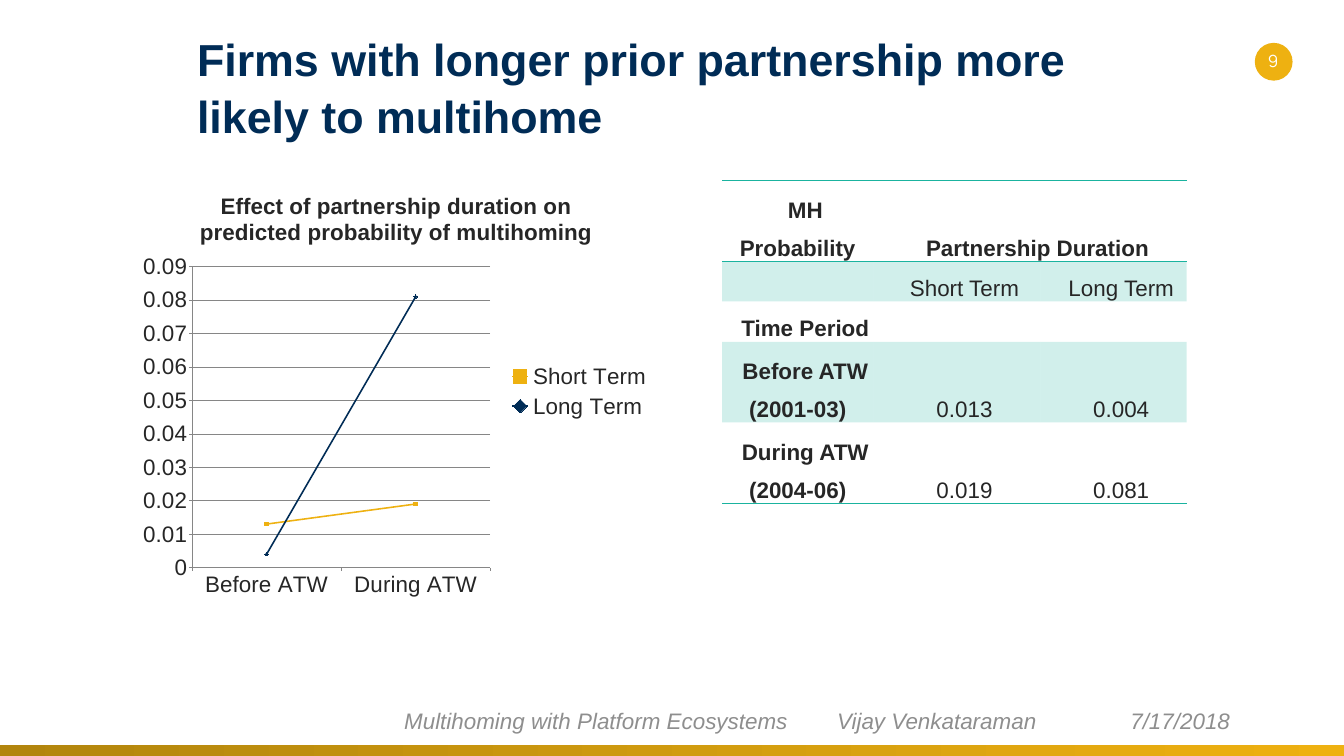
import pptx
import pptx.util
import pptx.chart.data
import pptx.dml.color
import pptx.enum.chart
import pptx.enum.shapes
import pptx.enum.text
import pptx.oxml
import pptx.oxml.ns

Inches, Pt = pptx.util.Inches, pptx.util.Pt
Align, Anchor = pptx.enum.text.PP_ALIGN, pptx.enum.text.MSO_ANCHOR
qn = pptx.oxml.ns.qn
NAVY, GOLD, TEAL, INK, GREY = "002C56", "EEB111", "1AB39F", "262626", "8E8E8E"


def paint(target, color):
    """Give a font, fill or line format a solid colour."""
    if hasattr(target, "solid"):
        target.solid()
        target = target.fore_color
    elif hasattr(target, "color"):
        target = target.color
    target.rgb = pptx.dml.color.RGBColor.from_string(color)


def write(para, text, size, color, bold=False, italic=False, face="Arial"):
    """Add one formatted run to a paragraph."""
    run = para.add_run()
    run.text = text
    font = run.font
    font.name, font.size, font.bold, font.italic = face, Pt(size), bold, italic
    paint(font, color)


deck = pptx.Presentation()
deck.slide_width, deck.slide_height = Inches(26.67), Inches(15)
slide = deck.slides.add_slide(deck.slide_layouts[6])
shapes = slide.shapes

# Page badge and bottom bar
kinds = pptx.enum.shapes.MSO_SHAPE
badge = shapes.add_shape(kinds.OVAL, Inches(24.9), Inches(0.85), Inches(0.75), Inches(0.75))
bar = shapes.add_shape(kinds.RECTANGLE, 0, Inches(14.79), Inches(26.67), Inches(0.38))
for shape in (badge, bar):
    shape.shadow.inherit = False
    shape.line.fill.background()
paint(badge.fill, GOLD)
bar.fill.gradient()
bar.fill.gradient_angle = 0
for stop, color in zip(bar.fill.gradient_stops, ("B2850D", GOLD)):
    paint(stop, color)

# Text boxes: place, side and top insets, anchor, alignment, text and style
boxes = [
    ((24.68, 0.95, 1.17, 0.8), 0.1, 0.05, Anchor.TOP, Align.CENTER,
     "9", dict(size=24, color="FFFFFF", face="Manrope")),
    ((3.64, 0.45, 19.92, 2.4), 0.27, 0.13, Anchor.TOP, Align.LEFT,
     "Firms with longer prior partnership more likely to multihome",
     dict(size=64, color=NAVY, bold=True)),
    ((7.75, 13.86, 13.85, 0.88), 0.27, 0.13, Anchor.MIDDLE, Align.LEFT,
     "Multihoming with Platform Ecosystems\tVijay Venkataraman",
     dict(size=32, color=GREY, italic=True)),
    ((22.16, 13.9, 3.18, 0.8), 0.27, 0.13, Anchor.MIDDLE, Align.LEFT,
     "7/17/2018", dict(size=32, color=GREY, italic=True)),
]
for place, side, top, anchor, align, text, style in boxes:
    frame = shapes.add_textbox(*map(Inches, place)).text_frame
    frame.word_wrap = True
    frame.margin_left = frame.margin_right = Inches(side)
    frame.margin_top = frame.margin_bottom = Inches(top)
    frame.vertical_anchor = anchor
    para = frame.paragraphs[0]
    para.alignment = align
    if style["size"] == 64:
        para.line_spacing = 1.05
    if "\t" in text:
        tabs = pptx.oxml.parse_xml(
            f'<a:tabLst {pptx.oxml.ns.nsdecls("a")}>'
            f'<a:tab pos="{Inches(8.59)}" algn="l"/></a:tabLst>')
        para._p.get_or_add_pPr().append(tabs)
    write(para, text, **style)

# Probability table
rows = [
    ["MH Probability", "Partnership Duration", ""],
    ["", "Short Term", "Long Term"],
    ["Time Period", "", ""],
    ["Before ATW (2001-03)", "0.013", "0.004"],
    ["During ATW (2004-06)", "0.019", "0.081"],
]
edges = {0: ("lnT", "lnB"), 4: ("lnB",)}
grid = shapes.add_table(5, 3, Inches(14.33), Inches(3.58), Inches(9.23), Inches(6.15))
table = grid.table
table.first_row = table.horz_banding = False
table._tbl.tblPr.find(qn("a:tableStyleId")).text = "{2D5ABB26-0587-4C30-8999-92F81FD0307C}"
for col, width in zip(table.columns, (3, 3.32, 2.9)):
    col.width = Inches(width)
for row, height in zip(table.rows, (1.57, 0.72, 0.72, 1.57, 1.57)):
    row.height = Inches(height)
table.cell(0, 1).merge(table.cell(0, 2))
for r, row in enumerate(rows):
    for c, text in enumerate(row):
        cell = table.cell(r, c)
        cell.margin_left = cell.margin_right = Inches(0.07)
        cell.margin_top = cell.margin_bottom = 0
        cell.vertical_anchor = Anchor.BOTTOM
        props = cell._tc.get_or_add_tcPr()
        if r % 2:
            paint(cell.fill, TEAL)
            tint = props.find(".//" + qn("a:srgbClr"))
            tint.makeelement(qn("a:alpha"), {"val": "20000"})
            tint.append(tint.makeelement(qn("a:alpha"), {"val": "20000"}))
        else:
            cell.fill.background()
        for i, edge in enumerate(edges.get(r, ())):
            props.insert(i, pptx.oxml.parse_xml(
                f'<a:{edge} {pptx.oxml.ns.nsdecls("a")} w="{Pt(1)}"><a:solidFill>'
                f'<a:srgbClr val="{TEAL}"/></a:solidFill></a:{edge}>'))
        if text:
            para = cell.text_frame.paragraphs[0]
            para.alignment, para.line_spacing = Align.CENTER, 1.5
            para._p.get_or_add_pPr().set("indent", str(Inches(0.3)))
            write(para, text, 32, INK, bold=r == 0 or c == 0)

# Line chart
enums = pptx.enum.chart
data = pptx.chart.data.CategoryChartData()
data.categories = ["Before ATW", "During ATW"]
data.add_series("Short Term", (0.013, 0.019))
data.add_series("Long Term", (0.004, 0.081))
chart = shapes.add_chart(enums.XL_CHART_TYPE.LINE_MARKERS, Inches(2.67), Inches(3.5),
                         Inches(10.38), Inches(8.53), data).chart
chart.font.name, chart.font.size = "Arial", Pt(32)
paint(chart.font, INK)
chart.has_title = True
write(chart.chart_title.text_frame.paragraphs[0],
      "Effect of partnership duration on predicted probability of multihoming",
      32, INK, bold=True)
chart.chart_title.include_in_layout = False
chart.has_legend = True
chart.legend.position = enums.XL_LEGEND_POSITION.RIGHT
chart.legend.include_in_layout = False

marks = (enums.XL_MARKER_STYLE.SQUARE, enums.XL_MARKER_STYLE.DIAMOND)
for series, color, mark in zip(chart.plots[0].series, (GOLD, NAVY), marks):
    series.smooth = False
    series.format.line.width = Pt(2.25)
    paint(series.format.line, color)
    series.marker.style, series.marker.size = mark, 5
    paint(series.marker.format.fill, color)
    paint(series.marker.format.line, color)
chart.plots[0].vary_by_categories = False

scale = chart.value_axis
scale.minimum_scale, scale.maximum_scale, scale.major_unit = 0, 0.09, 0.01
scale.has_major_gridlines = True
scale.tick_labels.number_format = "General"
scale.tick_labels.number_format_is_linked = False
for axis in (scale, chart.category_axis):
    axis.major_tick_mark = enums.XL_TICK_MARK.OUTSIDE
    axis.minor_tick_mark = enums.XL_TICK_MARK.NONE
    paint(axis.format.line, "868686")
paint(scale.major_gridlines.format.line, "868686")

# Plot area as shares of the chart
area = chart._chartSpace.chart.plotArea
for old in area.findall(qn("c:layout")):
    area.remove(old)
shares = "".join(f'<c:{k} val="{v}"/>' for k, v in
                 (("x", 0.11), ("y", 0.21), ("w", 0.57), ("h", 0.7)))
area.insert(0, pptx.oxml.parse_xml(
    f'<c:layout {pptx.oxml.ns.nsdecls("c")}><c:manualLayout><c:layoutTarget val="inner"/>'
    f'<c:xMode val="edge"/><c:yMode val="edge"/>{shares}</c:manualLayout></c:layout>'))

deck.save("out.pptx")
